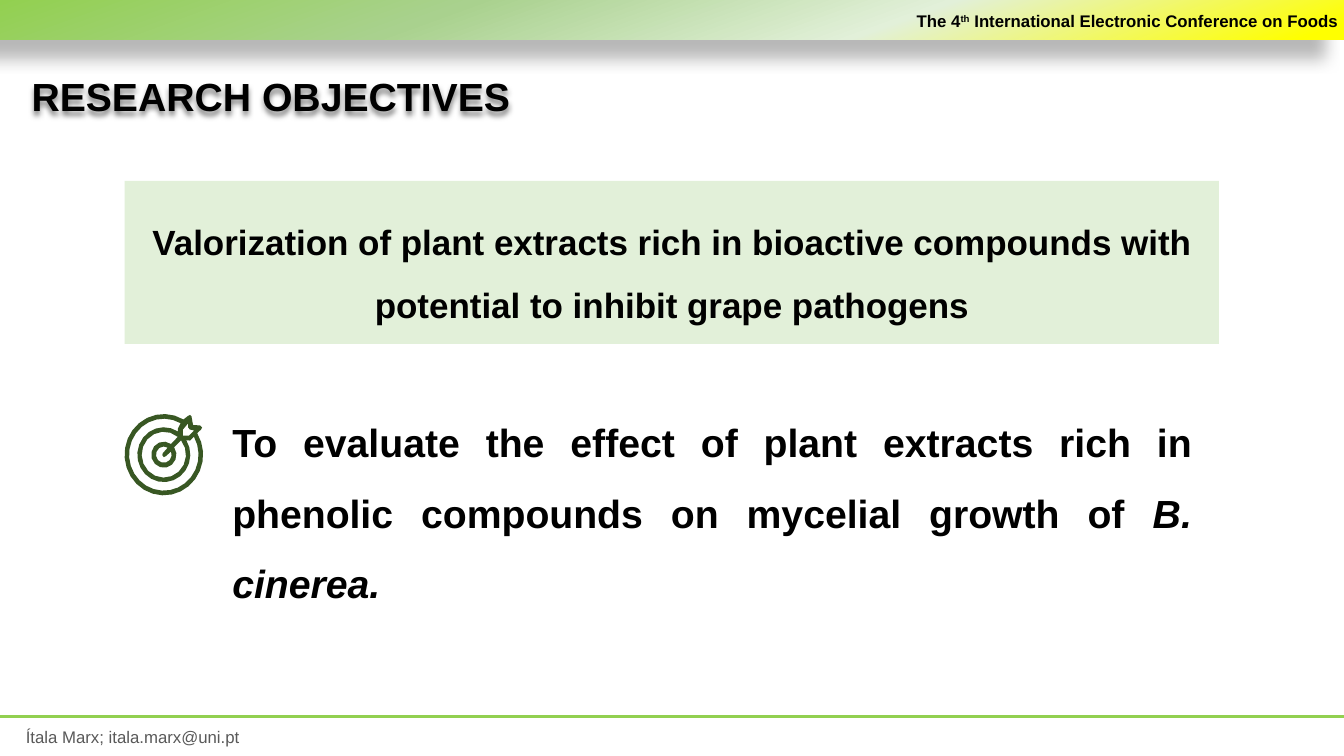
from math import cos, radians, sin

from lxml import etree
from pptx import Presentation
from pptx.dml.color import RGBColor
from pptx.enum.shapes import MSO_CONNECTOR, MSO_SHAPE
from pptx.enum.text import MSO_ANCHOR, MSO_AUTO_SIZE, PP_ALIGN
from pptx.oxml import parse_xml
from pptx.oxml.ns import qn
from pptx.util import Cm, Pt

BLACK = RGBColor(0x00, 0x00, 0x00)
GREY = RGBColor(0x59, 0x59, 0x59)
LIME = RGBColor(0x92, 0xD0, 0x50)
SAGE = RGBColor(0xA9, 0xD1, 0x8E)
PALE_GREEN = RGBColor(0xE2, 0xF0, 0xD9)
YELLOW = RGBColor(0xFF, 0xFF, 0x00)
DARK_GREEN = RGBColor(0x38, 0x57, 0x23)

DRAWING = 'xmlns:a="http://schemas.openxmlformats.org/drawingml/2006/main"'
HEADER_STOPS = [(0, LIME), (33, SAGE), (66, PALE_GREEN), (97, YELLOW)]


def shadow_effect(blur, distance, angle, opacity):
    return parse_xml(
        f'<a:effectLst {DRAWING}><a:outerShdw blurRad="{Pt(blur)}" dist="{Pt(distance)}" '
        f'dir="{angle * 60000}" algn="tl" rotWithShape="0"><a:srgbClr val="{BLACK}">'
        f'<a:alpha val="{opacity * 1000}"/></a:srgbClr></a:outerShdw></a:effectLst>')


def write_text(shape, runs, size, color=BLACK, bold=True, align=PP_ALIGN.LEFT,
               anchor=MSO_ANCHOR.TOP, spacing=1.0):
    """Fill a shape with one paragraph; runs are (text, extra font format) pairs."""
    frame = shape.text_frame
    frame.word_wrap = True
    frame.auto_size = MSO_AUTO_SIZE.NONE
    frame.vertical_anchor = anchor
    paragraph = frame.paragraphs[0]
    layout = {"alignment": align, "line_spacing": spacing, "space_before": Pt(0)}
    for name, value in layout.items():
        setattr(paragraph, name, value)
    for text, extra in runs:
        run = paragraph.add_run()
        run.text = text
        run.font.color.rgb = color
        font_format = {"name": "Arial", "size": Pt(size), "bold": bold, **extra}
        for name, value in font_format.items():
            setattr(run.font, name, value)
    return paragraph


def place(shape, box):
    for name, value in zip(("left", "top", "width", "height"), box):
        setattr(shape, name, value)


def add_rectangle(slide, box):
    shape = slide.shapes.add_shape(MSO_SHAPE.RECTANGLE, *box)
    shape.shadow.inherit = False
    shape.line.fill.background()
    return shape


def add_header(slide, left, top, width, height):
    # Gradient band with a soft shadow
    band = add_rectangle(slide, (left, top, width, height))
    stops = "".join(f'<a:gs pos="{position * 1000}"><a:srgbClr val="{color}"/></a:gs>'
                    for position, color in HEADER_STOPS)
    properties = band.fill._xPr
    properties.find(qn("a:prstGeom")).addnext(parse_xml(
        f'<a:gradFill {DRAWING} rotWithShape="1"><a:gsLst>{stops}</a:gsLst>'
        f'<a:lin ang="{70 * 60000}" scaled="0"/></a:gradFill>'))
    properties.replace(properties.find(qn("a:effectLst")), shadow_effect(11.8, 19.7, 141, 28))

    # Conference name
    label_width = Cm(17.48)
    label = slide.shapes.add_textbox(left + width - label_width + Cm(0.11), top + Cm(0.15),
                                     label_width, Cm(0.77))
    paragraph = write_text(label, [("The 4", {}), ("th", {}),
                                   (" International Electronic Conference on Foods", {})],
                           12, align=PP_ALIGN.RIGHT)
    paragraph.runs[1].font._element.set("baseline", "30000")


def add_title(slide, *box):
    title = slide.shapes.title
    place(title, box)
    write_text(title, [("RESEARCH OBJECTIVES", {})], 28, anchor=MSO_ANCHOR.MIDDLE)
    title._element.spPr.append(shadow_effect(4, 3, 90, 50))


def add_aim(slide, *box):
    panel = add_rectangle(slide, box)
    panel.fill.solid()
    panel.fill.fore_color.rgb = PALE_GREEN
    write_text(panel, [("Valorization of plant extracts rich in bioactive compounds with "
                        "potential to inhibit grape pathogens", {})],
               25, align=PP_ALIGN.CENTER, anchor=MSO_ANCHOR.MIDDLE, spacing=1.5)


def arc(radius, start, end, steps=16):
    """Points on a circle around the target's centre, angles in degrees."""
    angles = [radians(start + (end - start) * step / steps) for step in range(steps + 1)]
    return [(radius * cos(angle), 1.035 * radius * sin(angle)) for angle in angles]


def add_target_icon(slide, left, top, width):
    # Outlines on a grid 78 units wide with the bullseye at (0, 0)
    unit = width / 78
    outlines = [
        # Outer disc with the dart's tail
        arc(39, -32, 300, 24) + [(24, -38.5), (26, -39.5), (27.5, -38), (29, -29.5),
                                 (36, -29), (38, -27), (37, -25)],
        # Opening in the dart's tail
        [(24, -27), (26, -25), (30, -24), (25, -19), (19, -19), (19, -25), (24, -31)],
        # Bullseye around the dart's tip
        arc(7.8, -23, 300, 10) + [(-1, -1.5), (-1.5, 0.5), (0, 2.5), (2, 1.5)],
        # Inner gap
        arc(22, -39, 309) + arc(12.5, 305, -35, 12),
        # Outer gap
        arc(34.5, -30, 299, 24) + [(15, -28), (14, -26)] + arc(26.3, 302, -32, 20)
        + [(26, -14), (27, -15)],
    ]
    center_x, center_y = left + 39 * unit, top + 40.5 * unit
    contours = [[(center_x + x * unit, center_y + y * unit) for x, y in outline]
                for outline in outlines]
    builder = slide.shapes.build_freeform(*contours[0][0])
    for index, contour in enumerate(contours):
        if index:
            builder.move_to(*contour[0])
        builder.add_line_segments(contour[1:], close=True)
    icon = builder.convert_to_shape()
    icon.shadow.inherit = False
    icon.fill.solid()
    icon.fill.fore_color.rgb = DARK_GREEN
    icon.line.fill.background()


def add_objective(slide, left, top, width, height):
    add_target_icon(slide, left, top + Cm(0.61), Cm(1.98))
    body = slide.placeholders[1]
    indent = Cm(2.46)
    place(body, (left + indent, top, width - indent, height))
    paragraph = write_text(body, [
        ("To evaluate the effect of plant extracts rich in phenolic compounds "
         "on mycelial growth of ", {}), ("B. cinerea.", {"italic": True})],
        28, align=PP_ALIGN.JUSTIFY, spacing=1.5)
    properties = paragraph._p.get_or_add_pPr()
    properties.set("marL", "0")
    properties.set("indent", "0")
    etree.SubElement(properties, qn("a:buNone"))


def add_footer(slide, left, top, width):
    rule = slide.shapes.add_connector(MSO_CONNECTOR.STRAIGHT, left, top, left + width, top)
    rule.line.color.rgb = LIME
    rule.line.width = Pt(2.25)
    etree.SubElement(rule._element.spPr, qn("a:effectLst"))
    contact = slide.shapes.add_textbox(left + Cm(0.4), top + Cm(0.13), Cm(7.44), Cm(0.77))
    write_text(contact, [("Ítala Marx; itala.marx@uni.pt", {})], 12, GREY, bold=False)


def main():
    presentation = Presentation()
    presentation.slide_width = Cm(33.87)
    presentation.slide_height = Cm(19.05)
    slide = presentation.slides.add_slide(presentation.slide_layouts[1])
    page_width = presentation.slide_width

    add_footer(slide, 0, Cm(18.05), page_width)
    add_header(slide, 0, 0, page_width, Cm(1.0))
    add_title(slide, Cm(0.54), Cm(1.68), Cm(24.33), Cm(1.45))
    add_aim(slide, Cm(3.14), Cm(4.56), Cm(27.58), Cm(4.11))
    add_objective(slide, Cm(3.14), Cm(9.82), Cm(27.15), Cm(5.41))
    presentation.save("out.pptx")


if __name__ == "__main__":
    main()
